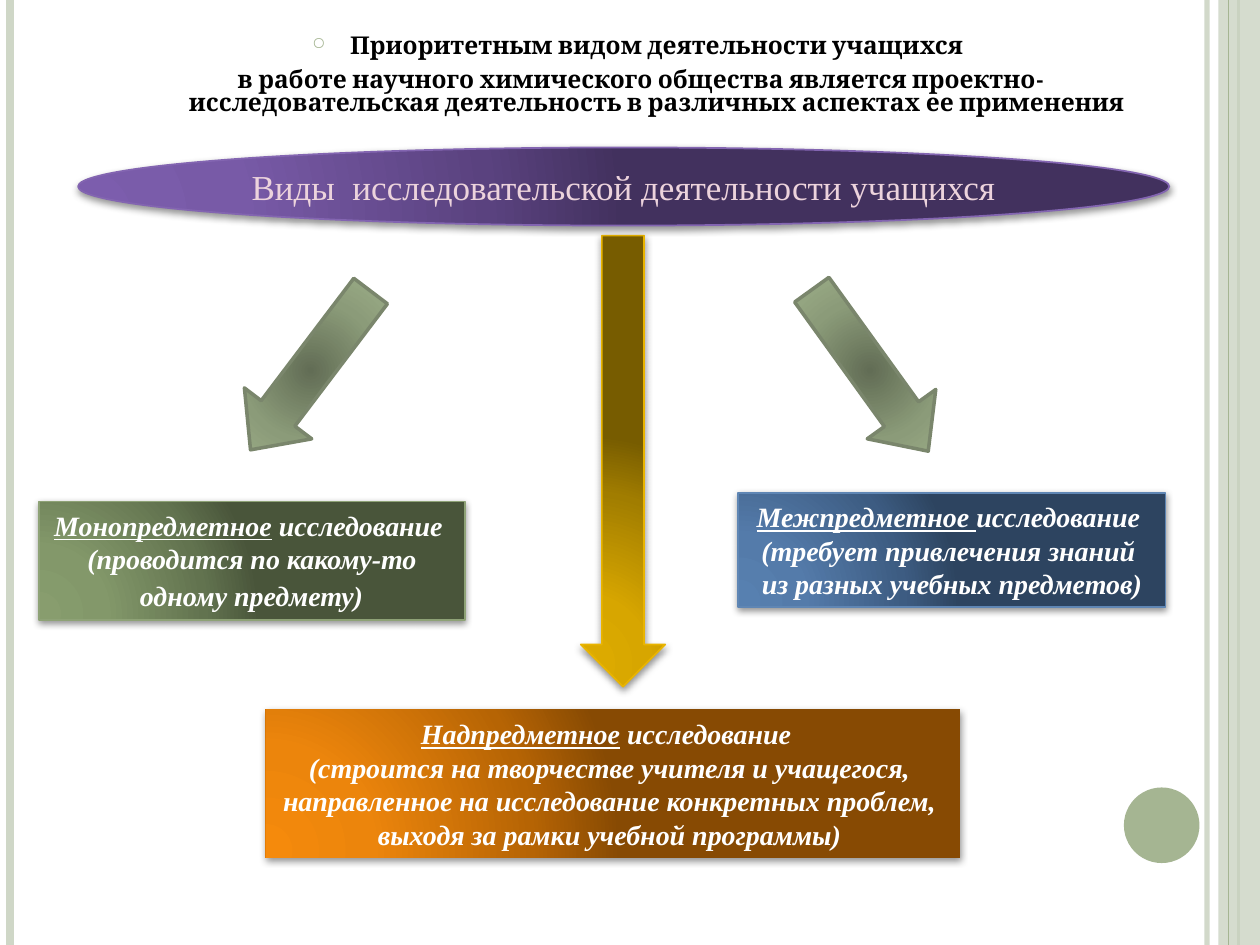
from lxml.etree import SubElement
from pptx import Presentation
from pptx.dml.color import RGBColor
from pptx.enum.shapes import MSO_CONNECTOR, MSO_SHAPE
from pptx.enum.text import MSO_ANCHOR, PP_ALIGN
from pptx.oxml import parse_xml
from pptx.oxml.ns import nsdecls, qn
from pptx.util import Inches, Pt

SERIF = "Times New Roman"
CORNER = (5, 100, 120, 10)
CENTRE = (50, 50, 50, 50)
GLOSS_STOPS = (0, 30, 75, 100)


def rgb(value):
    """Turn a hex string into a colour."""
    return RGBColor.from_string(value)


def set_alpha(fill, percent):
    """Make a solid fill partly transparent."""
    clr = fill._xPr.find(qn("a:solidFill"))[0]
    SubElement(clr, qn("a:alpha")).set("val", str(percent * 1000))


def set_gradient(sp, colours, stops, focus):
    """Fill a shape with a circular gradient."""
    gs = "".join(
        f'<a:gs pos="{pos * 1000}"><a:srgbClr val="{c}"/></a:gs>'
        for pos, c in zip(stops, colours))
    rect = " ".join(f'{side}="{v * 1000}"' for side, v in zip("ltrb", focus))
    sp.fill.solid()
    solid = sp._element.spPr.find(qn("a:solidFill"))
    solid.getparent().replace(solid, parse_xml(
        f'<a:gradFill {nsdecls("a")} rotWithShape="1"><a:gsLst>{gs}</a:gsLst>'
        f'<a:path path="circle"><a:fillToRect {rect}/></a:path></a:gradFill>'))


def add_shadow(sp):
    """Give a shape a soft shadow straight below it."""
    effects = sp._element.spPr.find(qn("a:effectLst"))
    effects.append(parse_xml(
        f'<a:outerShdw {nsdecls("a")} blurRad="{Pt(4)}" dist="{Pt(1.6)}" '
        'dir="5400000" rotWithShape="0"><a:srgbClr val="000000">'
        '<a:alpha val="42000"/></a:srgbClr></a:outerShdw>'))


def add_shape(slide, kind, box, line=None, width=1):
    """Add a preset shape with an optional outline and no shadow."""
    sp = slide.shapes.add_shape(kind, *map(Inches, box))
    sp.shadow.inherit = False
    if line:
        sp.line.color.rgb = rgb(line)
        sp.line.width = Pt(width)
    else:
        sp.line.fill.background()
    return sp


def add_glossy(slide, kind, box, colours, line=None):
    """Add a shape with a corner gradient and a shadow."""
    sp = add_shape(slide, kind, box, line)
    set_gradient(sp, colours, GLOSS_STOPS, CORNER)
    add_shadow(sp)
    return sp


def add_rule(slide, x, colour, width, alpha=100):
    """Draw a vertical rule over the full slide height."""
    line = slide.shapes.add_connector(
        MSO_CONNECTOR.STRAIGHT, Inches(x), 0, Inches(x), Inches(7.5))
    line.line.color.rgb = rgb(colour)
    line.line.width = Pt(width)
    set_alpha(line.line.fill, alpha) if alpha < 100 else None
    SubElement(line._element.spPr, qn("a:effectLst"))


def add_frame(slide):
    """Draw the side rules, the right band and the page disc."""
    add_rule(slide, 9.58, "CFD7C7", 3, 93)
    add_rule(slide, 0.08, "CFD7C7", 4.5)
    add_rule(slide, 9.83, "A5B592", 1.5)
    band = add_shape(slide, MSO_SHAPE.RECTANGLE, (9.67, 0, 0.33, 7.5))
    band.fill.solid()
    band.fill.fore_color.rgb = rgb("CFD7C7")
    set_alpha(band.fill, 87)
    add_rule(slide, 9.75, "A5B592", 0.75)
    disc = add_shape(slide, MSO_SHAPE.OVAL, (8.92, 6.25, 0.6, 0.6))
    disc.fill.solid()
    disc.fill.fore_color.rgb = rgb("A5B592")


def write_lines(sp, lines, size, colour, bold=False):
    """Write centred lines, bold ones also in italics."""
    tf = sp.text_frame
    tf.word_wrap = False
    tf.vertical_anchor = MSO_ANCHOR.MIDDLE
    for i, runs in enumerate(lines):
        p = tf.add_paragraph() if i else tf.paragraphs[0]
        p.alignment = PP_ALIGN.CENTER
        f = p.font
        f.name, f.size, f.bold, f.italic = SERIF, Pt(size), bold, bold
        f.color.rgb = rgb(colour)
        for text in runs:
            p.add_run().text = text
    return tf


def add_type_box(slide, box, colours, line, lines):
    """Add a box for one research type, its key word underlined."""
    sp = add_glossy(slide, MSO_SHAPE.RECTANGLE, box, colours, line)
    tf = write_lines(sp, lines, 16, "FFFFFF", bold=True)
    tf.paragraphs[0].runs[0].font.underline = True
    return tf


def add_side_arrow(slide, box, angle):
    """Add a slanted green arrow."""
    sp = add_shape(slide, MSO_SHAPE.DOWN_ARROW, box, "7A866C", 2)
    sp.adjustments[1] = 0.54
    sp.rotation = angle
    set_gradient(sp, ("626D55", "8B9B79", "A5B88F"), (0, 50, 100), CENTRE)


def add_intro(slide, box):
    """Add the introductory text with its ring bullet."""
    tf = slide.shapes.add_textbox(*map(Inches, box)).text_frame
    tf.word_wrap = True
    texts = (
        "Приоритетным видом деятельности учащихся ",
        "в работе научного химического общества является проектно-"
        "исследовательская деятельность в различных аспектах ее применения ")
    for i, text in enumerate(texts):
        p = tf.add_paragraph() if i else tf.paragraphs[0]
        p.text = text
        p.alignment = PP_ALIGN.CENTER
        p.line_spacing = 0.8
        p.space_before = Pt(6)
        p.font.name, p.font.size, p.font.bold = "Cambria", Pt(14), True
        p.font.color.rgb = rgb("000000")
        pPr = p._p.get_or_add_pPr()
        pPr.set("marL", str(Inches(0.3)))
        pPr.set("indent", str(Inches(-0.3)))
    bullet = (
        '<a:buClr {0}><a:srgbClr val="A5B592"/></a:buClr>',
        '<a:buSzPct {0} val="70000"/>',
        '<a:buChar {0} char="○"/>')
    pPr = tf.paragraphs[0]._p.pPr
    for part in bullet:
        pPr.find(qn("a:defRPr")).addprevious(
            parse_xml(part.format(nsdecls("a"))))


def add_scheme(slide):
    """Add the three research types, the arrows and the heading oval."""
    mono = add_type_box(
        slide, (0.31, 3.98, 3.38, 0.94),
        ("889D6E", "83986A", "62734F", "49553A"), "8EA276",
        [("Монопредметное", " исследование "),
         ("(проводится по какому-то",), (" одному предмету)", " ")])
    mono.paragraphs[-1].runs[-1].font.size = Pt(18)
    add_type_box(
        slide, (5.86, 3.91, 3.39, 0.91),
        ("5780B0", "547BAA", "3D5C82", "2D4460"), "5F86B4",
        [("Межпредметное ", "исследование "),
         ("(требует привлечения знаний ",), ("из разных учебных предметов)",)])
    add_type_box(
        slide, (2.11, 5.63, 5.51, 1.18),
        ("F58A0C", "EC850C", "B66404", "874A03"), None,
        [("Надпредметное", " исследование  "),
         ("(строится на творчестве учителя и учащегося, ",),
         ("направленное на исследование конкретных проблем, ",),
         ("выходя за рамки учебной программы) ",)])
    add_glossy(slide, MSO_SHAPE.DOWN_ARROW, (4.61, 1.87, 0.67, 3.58),
               ("DEAC00", "D7A600", "A17D00", "775C00"), "E9B400")
    for x, angle in ((6.57, 324.2), (2.13, 37.1)):
        add_side_arrow(slide, (x, 2.15, 0.67, 1.58), angle)
    oval = add_glossy(slide, MSO_SHAPE.OVAL, (0.62, 1.17, 8.66, 0.62),
                      ("7C5DAD", "785AA7", "5A427F", "42315E"), "8365B1")
    write_lines(oval, [("Виды  исследовательской деятельности учащихся",)],
                20, "ECD3DC")


def main():
    """Build and save the slide."""
    prs = Presentation()
    prs.slide_width, prs.slide_height = Inches(10), Inches(7.5)
    slide = prs.slides.add_slide(prs.slide_layouts[6])
    add_frame(slide)
    add_scheme(slide)
    add_intro(slide, (1.02, 0.23, 8.13, 0.78))
    prs.save("out.pptx")


if __name__ == "__main__":
    main()
